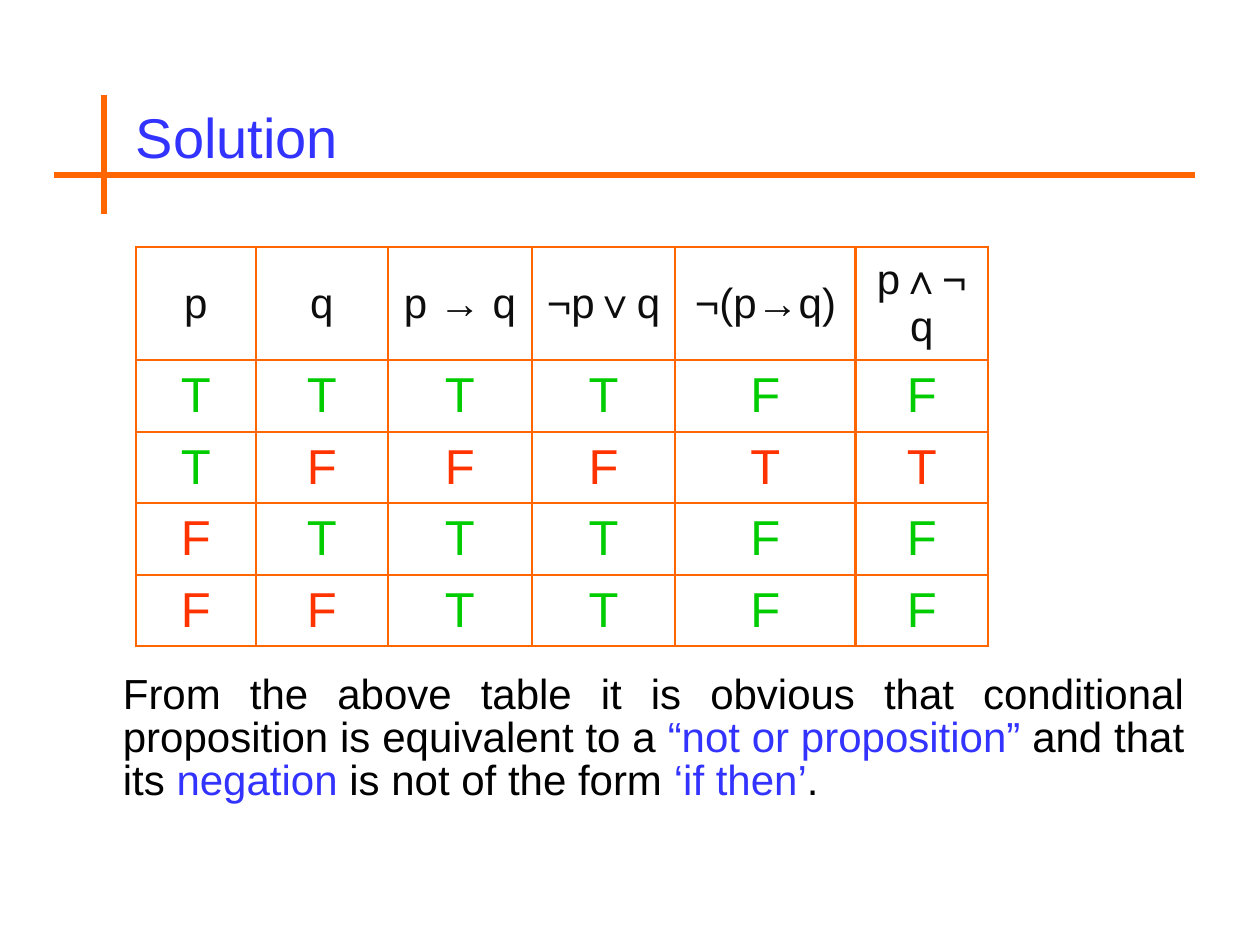
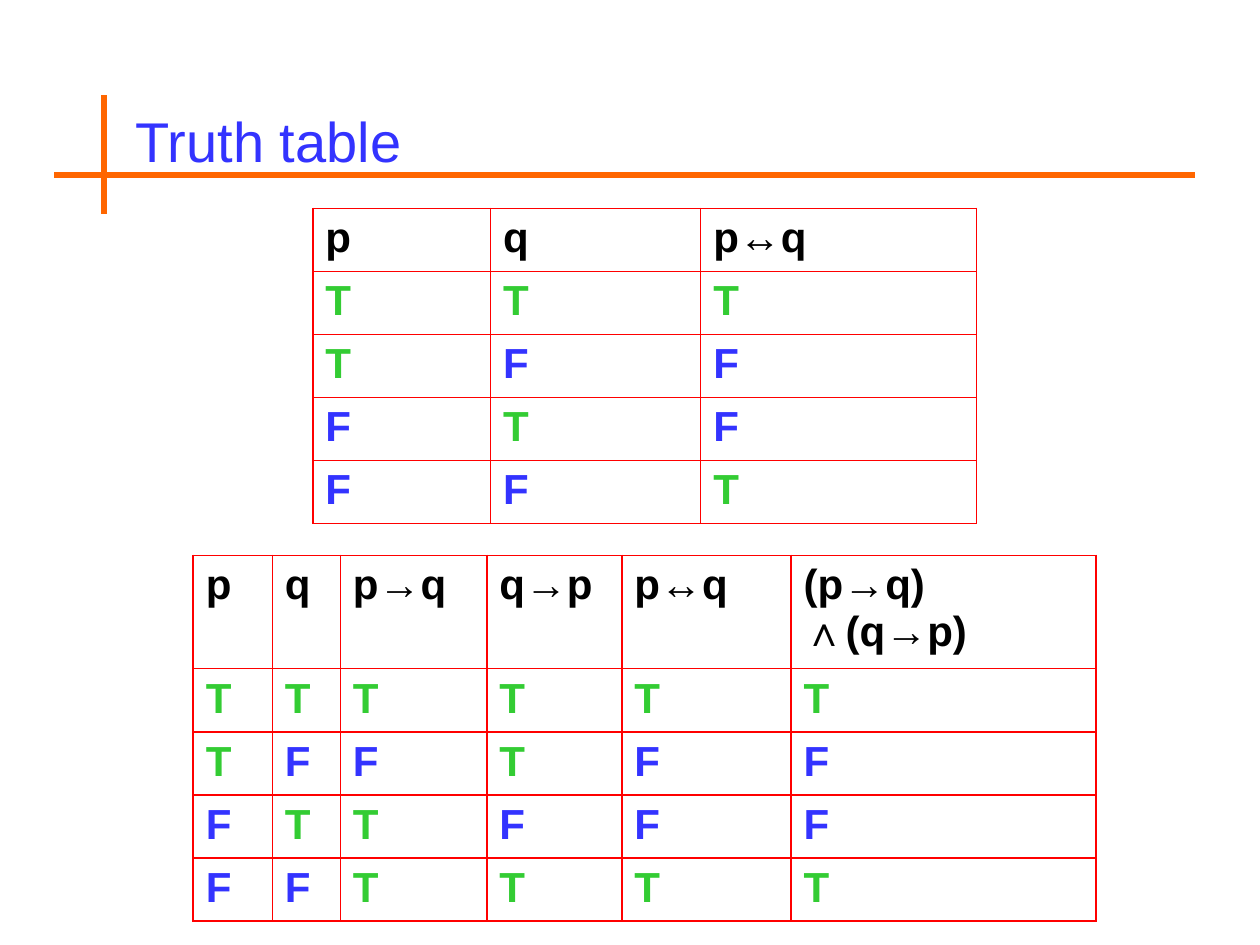
from lxml.etree import SubElement
from pptx import Presentation
from pptx.dml.color import RGBColor
from pptx.enum.shapes import MSO_CONNECTOR as Connector
from pptx.enum.text import MSO_ANCHOR as Anchor, PP_ALIGN as Align
from pptx.oxml.ns import qn
from pptx.util import Pt

BLUE = RGBColor(0x33, 0x33, 0xFF)
ORANGE = RGBColor(0xFF, 0x66, 0x00)
RED = RGBColor(0xFF, 0x00, 0x00)
BLACK = RGBColor(0x00, 0x00, 0x00)
INK = RGBColor(0x0D, 0x0D, 0x0D)
GREEN = RGBColor(0x00, 0xCC, 0x00)
SCARLET = RGBColor(0xFF, 0x33, 0x00)
LEAF = RGBColor(0x33, 0xCC, 0x33)

# Start and end points of the title cross
TITLE_CROSS = [((31, 100), (683, 100)), ((59.5, 54.5), (59.5, 122.5))]

CONCLUSION = [
    ("From the above table it is obvious that conditional proposition is equivalent to a ", BLACK),
    ("“not or proposition”", BLUE),
    (" and that its ", BLACK),
    ("negation", BLUE),
    (" is not of the form ", BLACK),
    ("‘if then’", BLUE),
    (".", BLACK),
]

# Each header is a list of runs; every second run is bold in the light style
IMPLICATION = {
    "position": (77.75, 141),
    "widths": [68.4, 75.6, 82.1, 82.1, 103, 75.6],
    "heights": [60.5, 40.4],
    "headers": [["p"], ["q"], ["p ", "→ ", "q"], ["¬p", "∨", "q"], ["¬(p", "→", "q)"], ["p∧¬q"]],
    "rows": ["TTTTFF", "TFFFTT", "FTTTFF", "FFTTFF"],
}
EQUIVALENCE = {
    "position": (178.75, 119),
    "widths": [101.5, 120.2, 157.7],
    "heights": [34, 34],
    "headers": [["p"], ["q"], ["p↔q"]],
    "rows": ["TTT", "TFF", "FTF", "FFT"],
}
BOTH_WAYS = {
    "position": (110.4, 317.3),
    "widths": [45.2, 38.9, 83.7, 77.2, 96.7, 174.2],
    "heights": [60.5, 35.25],
    "headers": [["p"], ["q"], ["p→q"], ["q→p"], ["p↔q"], ["(p→q) ∧(q→p)"]],
    "rows": ["TTTTTT", "TFFTFF", "FTTFFF", "FFTTTT"],
}


def color_by_outcome(row, column):
    """Colour p and q by their own value, the rest by the value of p → q."""
    return GREEN if row[min(column, 2) if column > 1 else column] == "T" else SCARLET


def color_by_value(row, column):
    return LEAF if row[column] == "T" else BLUE


CENTERED = {
    "border": (ORANGE, 1.5), "header_color": INK, "value_color": color_by_outcome,
    "value_size": 28, "bold": False, "align": Align.CENTER, "anchor": Anchor.MIDDLE,
}
BOLD = {
    "border": (RED, 1), "header_color": BLACK, "value_color": color_by_value,
    "value_size": 24, "bold": True, "align": Align.LEFT, "anchor": Anchor.TOP,
}


def add_run(paragraph, text, size, color, bold=False):
    run = paragraph.add_run()
    run.text = text
    for name, value in {"name": "Arial", "size": Pt(size), "bold": bold}.items():
        setattr(run.font, name, value)
    run.font.color.rgb = color


def add_text_box(slide, left, top, width, height, **format_values):
    box = slide.shapes.add_textbox(Pt(left), Pt(top), Pt(width), Pt(height))
    frame = box.text_frame
    for name, value in {"word_wrap": True, **format_values}.items():
        setattr(frame, name, value)
    return frame.paragraphs[0]


def add_title(slide, text, top, width, height):
    paragraph = add_text_box(slide, 70.5, top, width, height, vertical_anchor=Anchor.MIDDLE)
    add_run(paragraph, text, 32, BLUE)
    for start, end in TITLE_CROSS:
        line = slide.shapes.add_connector(Connector.STRAIGHT, *map(Pt, start + end))
        line.line.color.rgb = ORANGE
        line.line.width = Pt(3)
        SubElement(line._element.spPr, qn("a:effectLst"))


def set_borders(cell, color, width):
    properties = cell._tc.get_or_add_tcPr()
    for side in "LRTB":
        line = SubElement(properties, qn(f"a:ln{side}"), w=str(Pt(width)))
        fill = SubElement(line, qn("a:solidFill"))
        SubElement(fill, qn("a:srgbClr"), val=str(color))


def add_truth_table(slide, content, style):
    widths, rows = content["widths"], content["rows"]
    header_height, row_height = content["heights"]
    heights = [header_height] + [row_height] * len(rows)
    table = slide.shapes.add_table(
        len(heights), len(widths), *map(Pt, content["position"]), Pt(sum(widths)), Pt(sum(heights))
    ).table
    table.first_row = table.horz_banding = False
    for column, width in zip(table.columns, widths):
        column.width = Pt(width)
    for row, height in zip(table.rows, heights):
        row.height = Pt(height)

    for row_index in range(len(heights)):
        for column in range(len(widths)):
            cell = table.cell(row_index, column)
            set_borders(cell, *style["border"])
            cell.fill.background()
            cell.vertical_anchor = style["anchor"]
            paragraph = cell.text_frame.paragraphs[0]
            paragraph.alignment = style["align"]
            if row_index == 0:
                for index, text in enumerate(content["headers"][column]):
                    add_run(paragraph, text, 24, style["header_color"], style["bold"] or index % 2 == 1)
            else:
                row = rows[row_index - 1]
                add_run(paragraph, row[column], style["value_size"],
                        style["value_color"](row, column), style["bold"])


def add_conclusion(slide):
    paragraph = add_text_box(slide, 70.25, 386, 606.5, 72, margin_left=0, margin_right=0,
                             margin_top=0, margin_bottom=0)
    paragraph.alignment = Align.JUSTIFY
    paragraph.line_spacing = 0.85
    for text, color in CONCLUSION:
        add_run(paragraph, text, 24, color)


def main():
    presentation = Presentation()
    presentation.slide_width, presentation.slide_height = Pt(720), Pt(540)
    blank = presentation.slide_layouts[6]

    solution = presentation.slides.add_slide(blank)
    add_title(solution, "Solution", 32.5, 606, 90)
    add_truth_table(solution, IMPLICATION, CENTERED)
    add_conclusion(solution)

    truth_tables = presentation.slides.add_slide(blank)
    add_title(truth_tables, "Truth table", 55, 285, 50)
    for content in (EQUIVALENCE, BOTH_WAYS):
        add_truth_table(truth_tables, content, BOLD)

    presentation.save("out.pptx")


if __name__ == "__main__":
    main()
